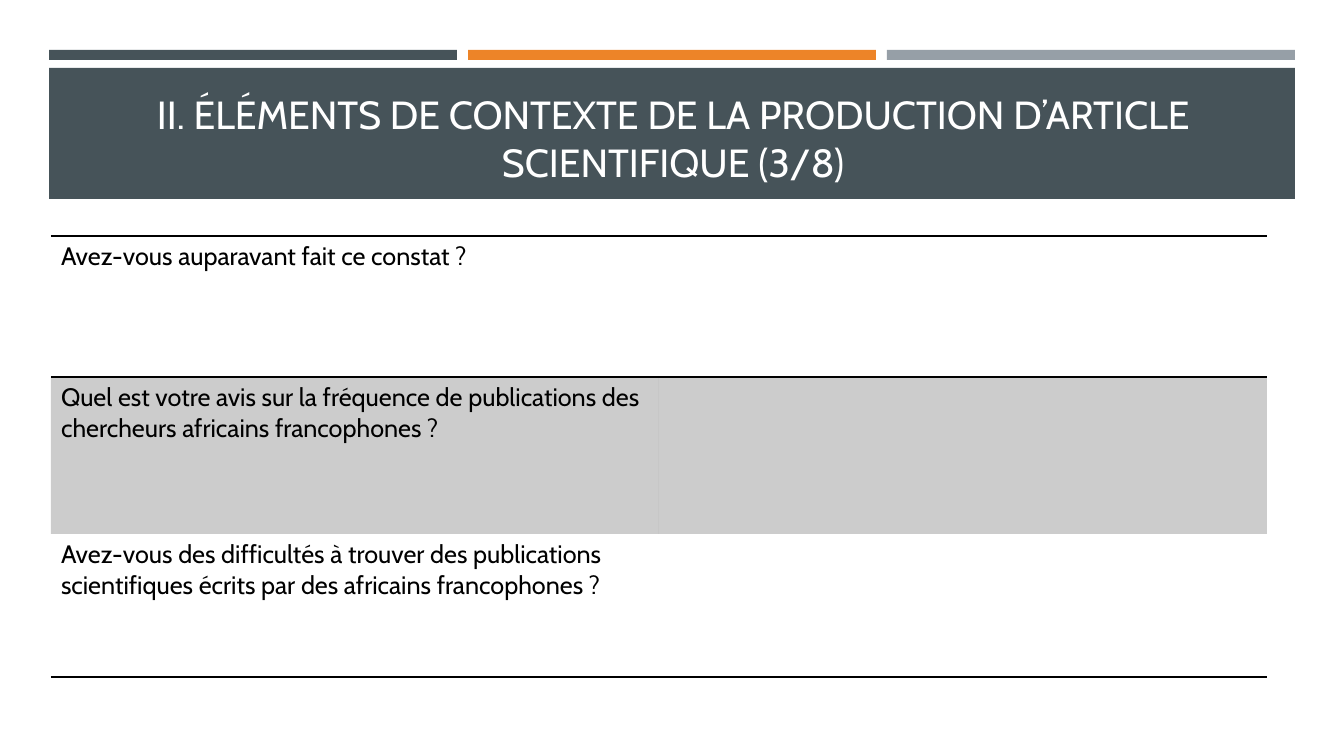
from dataclasses import dataclass

from lxml import etree
from pptx import Presentation
from pptx.dml.color import RGBColor
from pptx.enum.shapes import MSO_SHAPE
from pptx.enum.text import MSO_ANCHOR, MSO_AUTO_SIZE, PP_ALIGN
from pptx.oxml.ns import qn
from pptx.util import Emu, Pt

RECTANGLE = MSO_SHAPE.RECTANGLE
CENTER = PP_ALIGN.CENTER
BOTTOM, TOP = MSO_ANCHOR.BOTTOM, MSO_ANCHOR.TOP
NO_AUTOFIT = MSO_AUTO_SIZE.NONE
TITLE_ONLY = 5
EMU_PER_PX = 914400 / 100.8


@dataclass(frozen=True)
class Theme:
    font: str = "Cabin"
    slate: str = "465359"
    orange: str = "ED8428"
    grey: str = "969FA7"
    black: str = "000000"
    white: str = "FFFFFF"
    title_size: int = 28
    body_size: int = 18
    rule_width: int = 1
    shade_percent: int = 20


THEME = Theme()

TITLE = "II. ÉLÉMENTS DE CONTEXTE DE LA PRODUCTION D’ARTICLE SCIENTIFIQUE (3/8)"
# Question, row height in px, shaded, rule above, rule below
QUESTIONS = [
    ("Avez-vous auparavant fait ce constat ?", 141, False, True, True),
    ("Quel est votre avis sur la fréquence de publications des chercheurs "
     "africains francophones ?", 157, True, True, False),
    ("Avez-vous des difficultés à trouver des publications scientifiques "
     "écrits par des africains francophones ?", 143, False, False, True),
]


def px(length):
    return Emu(round(length * EMU_PER_PX))


def add_text(para, text, size, color):
    span = para.add_run()
    span.text = text
    span.font.name = THEME.font
    span.font.size = Pt(size)
    span.font.color.rgb = RGBColor.from_string(color)


def add_block(page, box, color):
    block = page.shapes.add_shape(RECTANGLE, *map(px, box))
    block.shadow.inherit = False
    block.fill.solid()
    block.fill.fore_color.rgb = RGBColor.from_string(color)
    block.line.fill.background()
    return block


def add_color_bars(page, box):
    left, top, width, height = box
    colors = (THEME.slate, THEME.orange, THEME.grey)
    gap = 11
    bar_width = (width - gap * (len(colors) - 1)) // len(colors)
    for index, color in enumerate(colors):
        bar_left = left + index * (bar_width + gap)
        add_block(page, (bar_left, top, bar_width, height), color)


def add_title_band(page, box):
    left, top, width, height = box
    band = add_block(page, box, THEME.slate)
    title = page.shapes.title
    band.element.addnext(title.element)
    title.left, title.top = px(left + 16), px(top + 10)
    title.width, title.height = px(width - 30), px(height - 19)
    frame = title.text_frame
    frame.word_wrap = True
    frame.auto_size = NO_AUTOFIT
    frame.vertical_anchor = BOTTOM
    para = frame.paragraphs[0]
    para.alignment = CENTER
    add_text(para, TITLE, THEME.title_size, THEME.white)


def set_borders(cell, above, below):
    """Draw the rules above and below a cell and clear its other sides."""
    properties = cell._tc.get_or_add_tcPr()
    sides = {"a:lnL": False, "a:lnR": False, "a:lnT": above, "a:lnB": below}
    for tag, visible in sides.items():
        line = etree.SubElement(properties, qn(tag), w=str(Pt(THEME.rule_width)))
        if visible:
            fill = etree.SubElement(line, qn("a:solidFill"))
            etree.SubElement(fill, qn("a:srgbClr"), val=THEME.black)
        else:
            etree.SubElement(line, qn("a:noFill"))


def set_shade(cell, shaded):
    if not shaded:
        cell.fill.background()
        return
    cell.fill.solid()
    cell.fill.fore_color.rgb = RGBColor.from_string(THEME.black)
    color = cell._tc.tcPr.find(qn("a:solidFill")).find(qn("a:srgbClr"))
    etree.SubElement(color, qn("a:alpha"), val=str(THEME.shade_percent * 1000))


def add_question_table(page, box):
    table = page.shapes.add_table(len(QUESTIONS), 2, *map(px, box)).table
    table.first_row = False
    table.horz_banding = False
    for column in table.columns:
        column.width = px(box[2] // 2)
    for row, question in zip(table.rows, QUESTIONS):
        text, height, shaded, above, below = question
        row.height = px(height)
        for cell in row.cells:
            cell.vertical_anchor = TOP
            set_borders(cell, above, below)
            set_shade(cell, shaded)
        para = row.cells[0].text_frame.paragraphs[0]
        add_text(para, text, THEME.body_size, THEME.black)


def build_question_slide(deck):
    page = deck.slides.add_slide(deck.slide_layouts[TITLE_ONLY])
    page.background.fill.solid()
    page.background.fill.fore_color.rgb = RGBColor.from_string(THEME.white)
    add_color_bars(page, (49, 50, 1246, 10))
    add_title_band(page, (49, 68, 1246, 131))
    add_question_table(page, (51, 236, 1216, 441))


def main():
    deck = Presentation()
    deck.slide_width, deck.slide_height = px(1344), px(756)
    build_question_slide(deck)
    deck.save("out.pptx")


if __name__ == "__main__":
    main()
